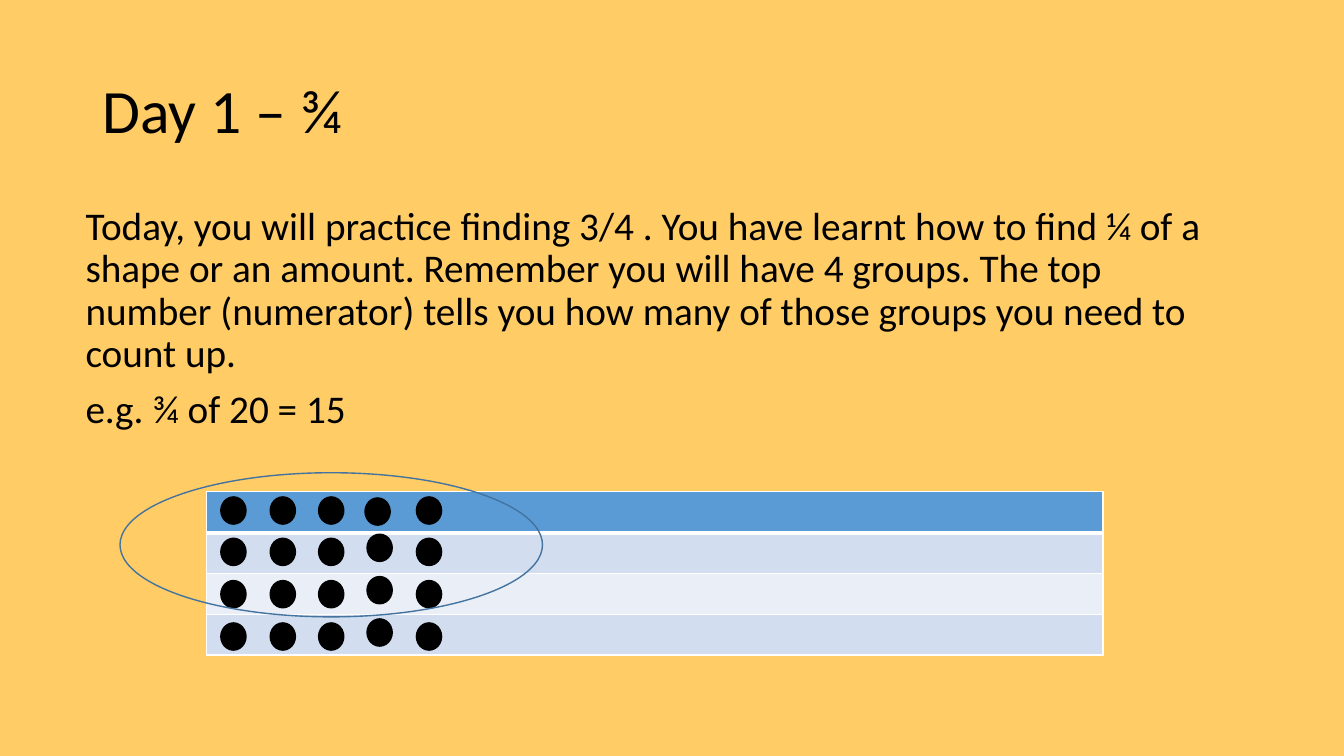
from dataclasses import dataclass

from lxml import etree
from pptx import Presentation
from pptx import util as u
from pptx.dml.color import RGBColor
from pptx.enum import shapes, text
from pptx.oxml import ns


@dataclass(frozen=True)
class Theme:
    font: str = "Calibri"
    title_size: int = 44
    body_size: int = 28
    background: str = "FFCC66"
    ink: str = "000000"
    ring: str = "43739E"
    grid: str = "FFFFFF"
    rows: tuple = ("5B9BD5", "D2DEEF", "EAEFF7", "D2DEEF")


THEME = Theme()
TITLE = "Day 1 – ¾"
BODY = (
    "Today, you will practice finding 3/4 . You have learnt how to find ¼ of a "
    "shape or an amount. Remember you will have 4 groups. The top number "
    "(numerator) tells you how many of those groups you need to count up.",
    "e.g. ¾ of 20 = 15",
)

# Dot grid, in inches from the table's corner
DOT_SIZE = (0.25, 0.27)
DOT_COLUMNS = (0.14, 0.63, 1.11, 1.59, 2.08)
DOT_ROWS = (0.05, 0.46, 0.88, 1.3)
# The fourth column sits slightly off the grid: (x, y) shift per row
LOOSE_COLUMN = 3
LOOSE_SHIFTS = ((-0.02, 0.01),) + ((0, -0.04),) * 3


def inches(*lengths):
    return [u.Inches(length) for length in lengths]


def color(value):
    return RGBColor.from_string(value)


def apply_format(target, values):
    for name, value in values.items():
        setattr(target, name, value)


def add_copy(page, box, paragraphs, size, anchor, space_before=0):
    """Left-aligned wrapped text in the given box."""
    frame = page.shapes.add_textbox(*inches(*box)).text_frame
    apply_format(frame, {"word_wrap": True, "vertical_anchor": anchor})
    for index, words in enumerate(paragraphs):
        para = frame.add_paragraph() if index else frame.paragraphs[0]
        apply_format(para, {"line_spacing": 0.9,
                            "space_before": u.Pt(space_before)})
        span = para.add_run()
        span.text = words
        apply_format(span.font, {"name": THEME.font, "size": u.Pt(size)})
        span.font.color.rgb = color(THEME.ink)


def add_ellipse(page, box, line, fill=None):
    oval = page.shapes.add_shape(shapes.MSO_SHAPE.OVAL, *inches(*box))
    oval.shadow.inherit = False
    if fill:
        oval.fill.solid()
        oval.fill.fore_color.rgb = color(fill)
    else:
        oval.fill.background()
    oval.line.color.rgb = color(line)
    oval.line.width = u.Pt(1)


def set_borders(cell, widths):
    """Cell borders, widths in points by side; they precede the fill."""
    properties = cell._tc.get_or_add_tcPr()
    for index, side in enumerate("LRTB"):
        edge = etree.Element(ns.qn(f"a:ln{side}"),
                             w=str(u.Pt(widths.get(side, 1))))
        fill = etree.SubElement(edge, ns.qn("a:solidFill"))
        etree.SubElement(fill, ns.qn("a:srgbClr"), val=THEME.grid)
        properties.insert(index, edge)


def add_groups_table(page, box):
    """One banded row per quarter, with a thick rule under the first."""
    count = len(THEME.rows)
    table = page.shapes.add_table(count, 1, *inches(*box)).table
    for index, fill in enumerate(THEME.rows):
        cell = table.cell(index, 0)
        cell.fill.solid()
        cell.fill.fore_color.rgb = color(fill)
        set_borders(cell, {0: {"B": 3}, 1: {"T": 3}}.get(index, {}))


def add_dots(page, box):
    """Five dots in each of the four groups."""
    left, top = box[:2]
    for column, x in enumerate(DOT_COLUMNS):
        for row, y in enumerate(DOT_ROWS):
            shift = LOOSE_SHIFTS[row] if column == LOOSE_COLUMN else (0, 0)
            place = (left + x + shift[0], top + y + shift[1])
            add_ellipse(page, place + DOT_SIZE, THEME.ink, THEME.ink)


def add_fraction_model(page, box):
    """Table, dots and the ring around three of the four groups."""
    left, top = box[:2]
    add_groups_table(page, box)
    add_dots(page, box)
    add_ellipse(page, (left - 0.86, top - 0.19, 4.19, 1.43), THEME.ring)


def build_lesson(deck):
    page = deck.slides.add_slide(deck.slide_layouts[6])
    page.background.fill.solid()
    page.background.fill.fore_color.rgb = color(THEME.background)
    add_copy(page, (0.92, 0.4, 11.5, 1.45), [TITLE], THEME.title_size,
             text.MSO_ANCHOR.MIDDLE)
    add_copy(page, (0.75, 2, 11.5, 4.76), BODY, THEME.body_size,
             text.MSO_ANCHOR.TOP, space_before=10)
    add_fraction_model(page, (2.05, 4.88, 8.89, 1.62))


def main():
    deck = Presentation()
    apply_format(deck, {"slide_width": u.Inches(13.33),
                        "slide_height": u.Inches(7.5)})
    build_lesson(deck)
    deck.save("out.pptx")


if __name__ == "__main__":
    main()
